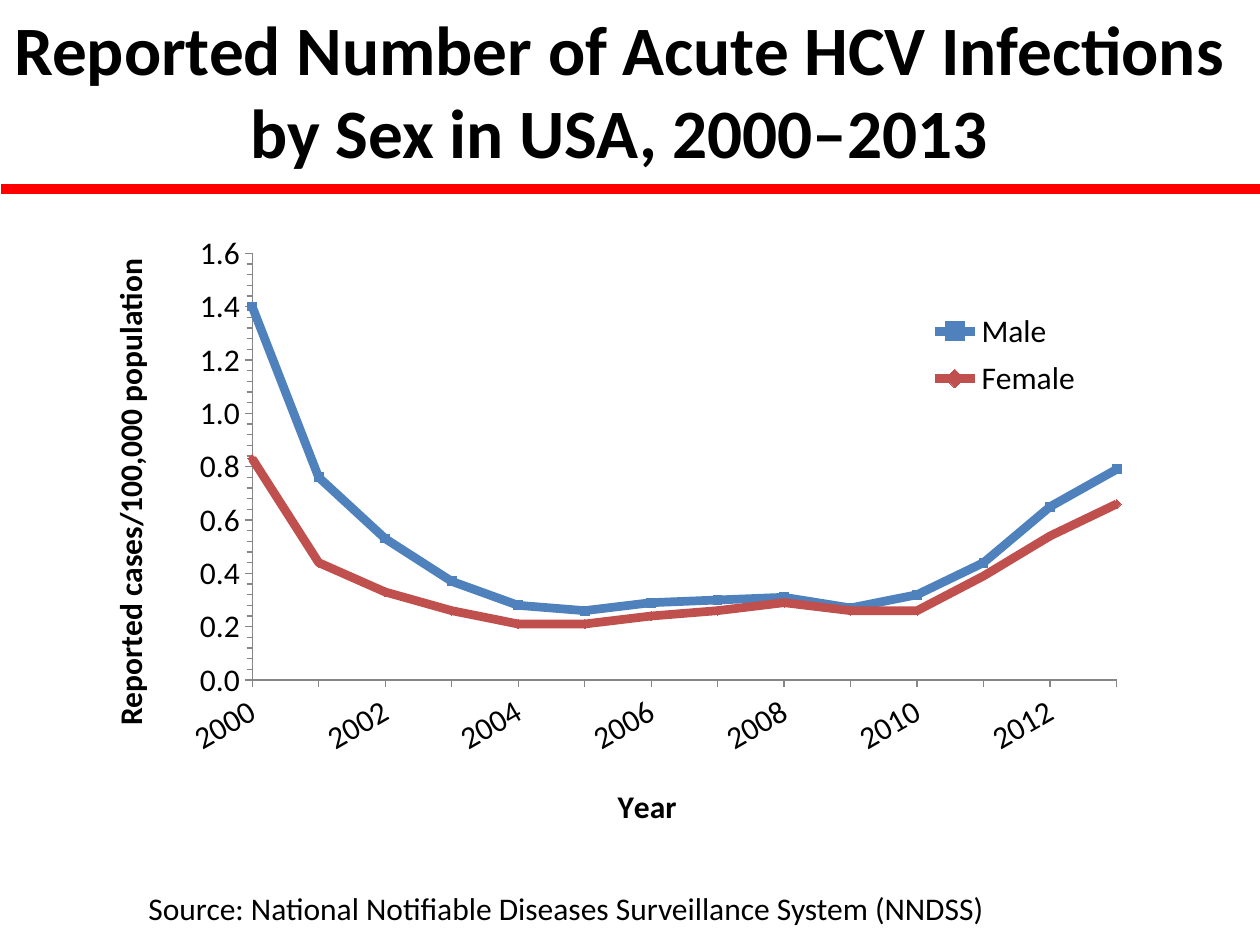
from lxml.etree import SubElement
from pptx import Presentation
from pptx.chart.data import CategoryChartData
from pptx.dml.color import RGBColor
from pptx.enum.chart import XL_CHART_TYPE, XL_LEGEND_POSITION, XL_MARKER_STYLE, XL_TICK_MARK
from pptx.enum.shapes import MSO_CONNECTOR
from pptx.enum.text import MSO_ANCHOR, PP_ALIGN
from pptx.oxml import parse_xml
from pptx.oxml.ns import nsdecls, qn
from pptx.util import Pt

COLORS = {"text": "000000", "rule": "FF0000", "axis": "868686",
          "Male": "4F81BD", "Female": "C0504D"}
MARKERS = {"Male": XL_MARKER_STYLE.SQUARE, "Female": XL_MARKER_STYLE.DIAMOND}
YEARS = [str(year) for year in range(2000, 2014)]
RATES = {
    "Male": [1.4, 0.76, 0.53, 0.37, 0.28, 0.26, 0.29, 0.3, 0.31, 0.27, 0.32, 0.44, 0.65, 0.79],
    "Female": [0.83, 0.44, 0.33, 0.26, 0.21, 0.21, 0.24, 0.26, 0.29, 0.26, 0.26, 0.39, 0.54, 0.66],
}


def px(n):
    return round(n * 914400 / 126)


def apply(obj, values):
    for name, value in values.items():
        setattr(obj, name, value)


class SlideBuilder:
    font = "Calibri"
    size = 18

    def __init__(self, prs):
        self.slide = prs.slides.add_slide(prs.slide_layouts[5])

    def style(self, font, size=size, bold=False):
        apply(font, {"name": self.font, "size": Pt(size), "bold": bold})
        font.color.rgb = RGBColor.from_string(COLORS["text"])

    def stroke(self, line, color, width):
        line.color.rgb = RGBColor.from_string(COLORS[color])
        line.width = Pt(width)

    def add_text(self, tf, text, size=size, bold=False, align=PP_ALIGN.LEFT):
        p = tf.paragraphs[0]
        p.alignment = align
        r = p.add_run()
        r.text = text
        self.style(r.font, size, bold)

    def title(self, text, x, y, w, h):
        sp = self.slide.shapes.title
        apply(sp, {"left": px(x), "top": px(y), "width": px(w), "height": px(h)})
        apply(sp.text_frame, {"word_wrap": True, "vertical_anchor": MSO_ANCHOR.MIDDLE})
        self.add_text(sp.text_frame, text, 39.6, True, PP_ALIGN.CENTER)

    def text(self, text, x, y, w, h):
        tf = self.slide.shapes.add_textbox(px(x), px(y), px(w), px(h)).text_frame
        tf.word_wrap = True
        self.add_text(tf, text)

    def line(self, x1, y1, x2, y2, color, width):
        ln = self.slide.shapes.add_connector(
            MSO_CONNECTOR.STRAIGHT, px(x1), px(y1), px(x2), px(y2))
        self.stroke(ln.line, color, width)
        SubElement(ln._element.spPr, qn("a:effectLst"))

    def place(self, element, **box):
        old = element.find(qn("c:layout"))
        if old is not None:
            element.remove(old)
        target = '<c:layoutTarget val="inner"/>' if element.tag == qn("c:plotArea") else ""
        modes = "".join(f'<c:{k}Mode val="edge"/>' for k in box if k in "xy")
        sizes = "".join(f'<c:{k} val="{v}"/>' for k, v in box.items())
        layout = parse_xml(f'<c:layout {nsdecls("c")}><c:manualLayout>'
                           f"{target}{modes}{sizes}</c:manualLayout></c:layout>")
        lead = [e for e in element if e.tag in (qn("c:tx"), qn("c:legendPos"))]
        element.insert(len(lead), layout)

    def axis(self, axis, title, x, y, **values):
        apply(axis, {"has_major_gridlines": False, "major_tick_mark": XL_TICK_MARK.OUTSIDE,
                     **values})
        self.stroke(axis.format.line, "axis", 0.75)
        self.style(axis.tick_labels.font)
        self.add_text(axis.axis_title.text_frame, title, bold=True, align=PP_ALIGN.CENTER)
        self.place(axis.axis_title._element, x=x, y=y)

    def chart(self, x, y, w, h):
        data = CategoryChartData(number_format="0.00")
        data.categories = YEARS
        for name, values in RATES.items():
            data.add_series(name, values)
        chart = self.slide.shapes.add_chart(
            XL_CHART_TYPE.LINE_MARKERS, px(x), px(y), px(w), px(h), data).chart
        apply(chart, {"has_title": False, "has_legend": True})
        self.style(chart.font)
        self.place(chart._chartSpace.chart.plotArea, x=0.137, y=0.05, w=0.704, h=0.682)

        apply(chart.legend, {"position": XL_LEGEND_POSITION.RIGHT, "include_in_layout": False})
        self.style(chart.legend.font)
        self.place(chart.legend._element, x=0.68, y=0.13, w=0.14, h=0.165)

        cat, val = chart.category_axis, chart.value_axis
        self.axis(cat, "Year", 0.43, 0.89, minor_tick_mark=XL_TICK_MARK.NONE)
        self.axis(val, "Reported cases/100,000 population", 0.015, 0.05,
                  minimum_scale=0, maximum_scale=1.6, major_unit=0.2, minor_unit=0.04,
                  minor_tick_mark=XL_TICK_MARK.OUTSIDE)
        apply(val.tick_labels, {"number_format": "#,##0.0", "number_format_is_linked": False})
        val.axis_title.text_frame._txBody.bodyPr.set("rot", "-5400000")
        cat._element.txPr.bodyPr.set("rot", "-1800000")
        cat._element.find(qn("c:noMultiLvlLbl")).addprevious(
            parse_xml(f'<c:tickLblSkip {nsdecls("c")} val="2"/>'))
        cross = val._element.find(qn("c:crossBetween"))
        if cross is None:
            cross = parse_xml(f'<c:crossBetween {nsdecls("c")} val="midCat"/>')
            val._element.find(qn("c:crosses")).addnext(cross)
        cross.set("val", "midCat")

        for series in chart.plots[0].series:
            series.smooth = False
            self.stroke(series.format.line, series.name, 5)
            apply(series.marker, {"style": MARKERS[series.name], "size": 5})
            series.marker.format.fill.solid()
            series.marker.format.fill.fore_color.rgb = RGBColor.from_string(COLORS[series.name])
            self.stroke(series.marker.format.line, series.name, 0.75)


def main():
    prs = Presentation()
    apply(prs, {"slide_width": px(1260), "slide_height": px(945)})
    s = SlideBuilder(prs)
    s.title("Reported Number of Acute HCV Infections by Sex in USA, 2000–2013", 0, 10, 1239, 158)
    s.line(1, 189, 1261, 189, "rule", 6)
    s.text("Source: National Notifiable Diseases Surveillance System (NNDSS)", 136, 883, 987, 50)
    s.chart(84, 222, 1228, 626)
    prs.save("out.pptx")


if __name__ == "__main__":
    main()
